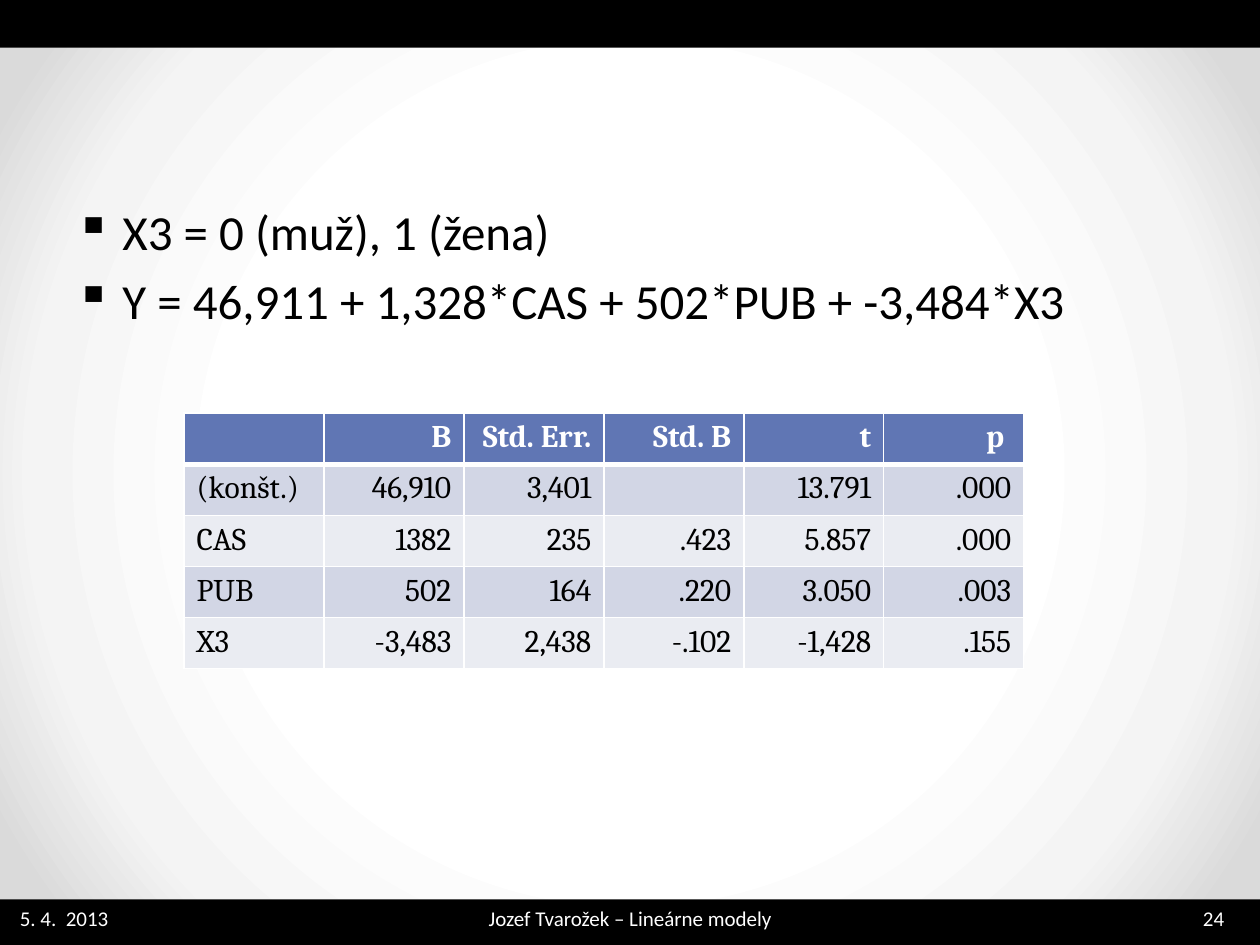
from lxml import etree
from pptx import Presentation
from pptx.dml.color import RGBColor
from pptx.enum import shapes, text
from pptx.oxml import parse_xml
from pptx.oxml.ns import nsdecls, qn
from pptx.util import Cm, Pt

BLACK = RGBColor(0x00, 0x00, 0x00)
WHITE = RGBColor(0xFF, 0xFF, 0xFF)
HEADER = RGBColor(0x60, 0x76, 0xB4)
BANDS = (RGBColor(0xD2, 0xD6, 0xE5), RGBColor(0xEA, 0xEC, 0xF2))
GLOW = ((50, WHITE), (76, RGBColor(0xF4, 0xF4, 0xF4)), (92, RGBColor(0xDA, 0xDA, 0xDA)))

SMALL = {"name": "Calibri", "size": Pt(12)}
BODY = {"name": "Calibri", "size": Pt(28)}
CELL = {"name": "Cambria", "size": Pt(18)}

BULLETS = ("X3 = 0 (muž), 1 (žena)", "Y = 46,911 + 1,328*CAS + 502*PUB + -3,484*X3")
COEFFICIENTS = (
    ("", "B", "Std. Err.", "Std. B", "t", "p "),
    ("(konšt.)", "46,910", "3,401", "", "13.791", ".000"),
    ("CAS", "1382", "235", ".423", "5.857", ".000"),
    ("PUB", "502", "164", ".220", "3.050", ".003"),
    ("X3", "-3,483", "2,438", "-.102", "-1,428", ".155"),
)


def write(p, words, style, color, **extra):
    r = p.add_run()
    r.text = words
    for key, value in {**style, **extra}.items():
        setattr(r.font, key, value)
    r.font.color.rgb = color


def text_frame(s, x, y, w, h):
    tf = s.shapes.add_textbox(Cm(x), Cm(y), Cm(w), Cm(h)).text_frame
    tf.word_wrap = True
    return tf


def background(s):
    s.background.fill.gradient()
    old = s.element.find(".//" + qn("a:gradFill"))
    stops = "".join(
        f'<a:gs pos="{at * 1000}"><a:srgbClr val="{c}"/></a:gs>' for at, c in GLOW)
    old.getparent().replace(old, parse_xml(
        f'<a:gradFill {nsdecls("a")} rotWithShape="1"><a:gsLst>{stops}</a:gsLst>'
        '<a:path path="circle"><a:fillToRect l="50000" t="50000" r="50000" b="50000"/>'
        '</a:path></a:gradFill>'))


def bar(s, x, y, w, h):
    sp = s.shapes.add_shape(shapes.MSO_SHAPE.RECTANGLE, Cm(x), Cm(y), Cm(w), Cm(h))
    sp.shadow.inherit = False
    sp.fill.solid()
    sp.fill.fore_color.rgb = BLACK
    sp.line.fill.background()


def footer(s, x, y, w, h):
    bar(s, x, y, w, h)
    # Date, author and title, page number
    for dx, width, words, align in (
        (0.15, 3.35, "5. 4.  2013", text.PP_ALIGN.LEFT),
        (6.7, 12.01, "Jozef Tvarožek – Lineárne modely", text.PP_ALIGN.CENTER),
        (24, 1.4, "24", text.PP_ALIGN.LEFT),
    ):
        p = text_frame(s, x + dx, y, width, 0.76).paragraphs[0]
        p.alignment = align
        write(p, words, SMALL, WHITE)


def bullet_list(s, x, y, w, h):
    tf = text_frame(s, x, y, w, h)
    for i, words in enumerate(BULLETS):
        p = tf.add_paragraph() if i else tf.paragraphs[0]
        p.space_before = Pt(5.6)
        write(p, words, BODY, BLACK)
        pPr = p._p.get_or_add_pPr()
        pPr.set("marL", str(Cm(0.95)))
        pPr.set("indent", str(-Cm(0.95)))
        etree.SubElement(pPr, qn("a:buChar")).set("char", "▪")


def cell_borders(cell, widths):
    tcPr = cell._tc.get_or_add_tcPr()
    for side, width in zip("LRTB", widths):
        tcPr.append(parse_xml(
            f'<a:ln{side} {nsdecls("a")} w="{Pt(width)}"><a:solidFill>'
            f'<a:srgbClr val="{WHITE}"/></a:solidFill></a:ln{side}>'))


def coefficient_table(s, x, y, w, h):
    rows, cols = len(COEFFICIENTS), len(COEFFICIENTS[0])
    table = s.shapes.add_table(rows, cols, Cm(x), Cm(y), Cm(w), Cm(h)).table
    table.horz_banding = False
    for i, row in enumerate(COEFFICIENTS):
        head = i == 0
        for j, words in enumerate(row):
            cell = table.cell(i, j)
            # Thick rule between the header and the first data row
            cell_borders(cell, (1, 1, 3 if i == 1 else 1, 3 if head else 1))
            cell.fill.solid()
            cell.fill.fore_color.rgb = HEADER if head else BANDS[(i - 1) % 2]
            p = cell.text_frame.paragraphs[0]
            p.alignment = text.PP_ALIGN.RIGHT if j else text.PP_ALIGN.LEFT
            if words:
                write(p, words, CELL, WHITE if head else BLACK, bold=head)


def main():
    prs = Presentation()
    prs.slide_width, prs.slide_height = Cm(25.4), Cm(19.05)
    s = prs.slides.add_slide(prs.slide_layouts[6])
    background(s)
    bar(s, 0, 0, 25.4, 0.96)
    footer(s, 0, 18.13, 25.4, 0.96)
    bullet_list(s, 1.27, 3.94, 22.86, 13.8)
    coefficient_table(s, 3.71, 8.33, 16.93, 5.15)
    prs.save("out.pptx")


if __name__ == "__main__":
    main()
